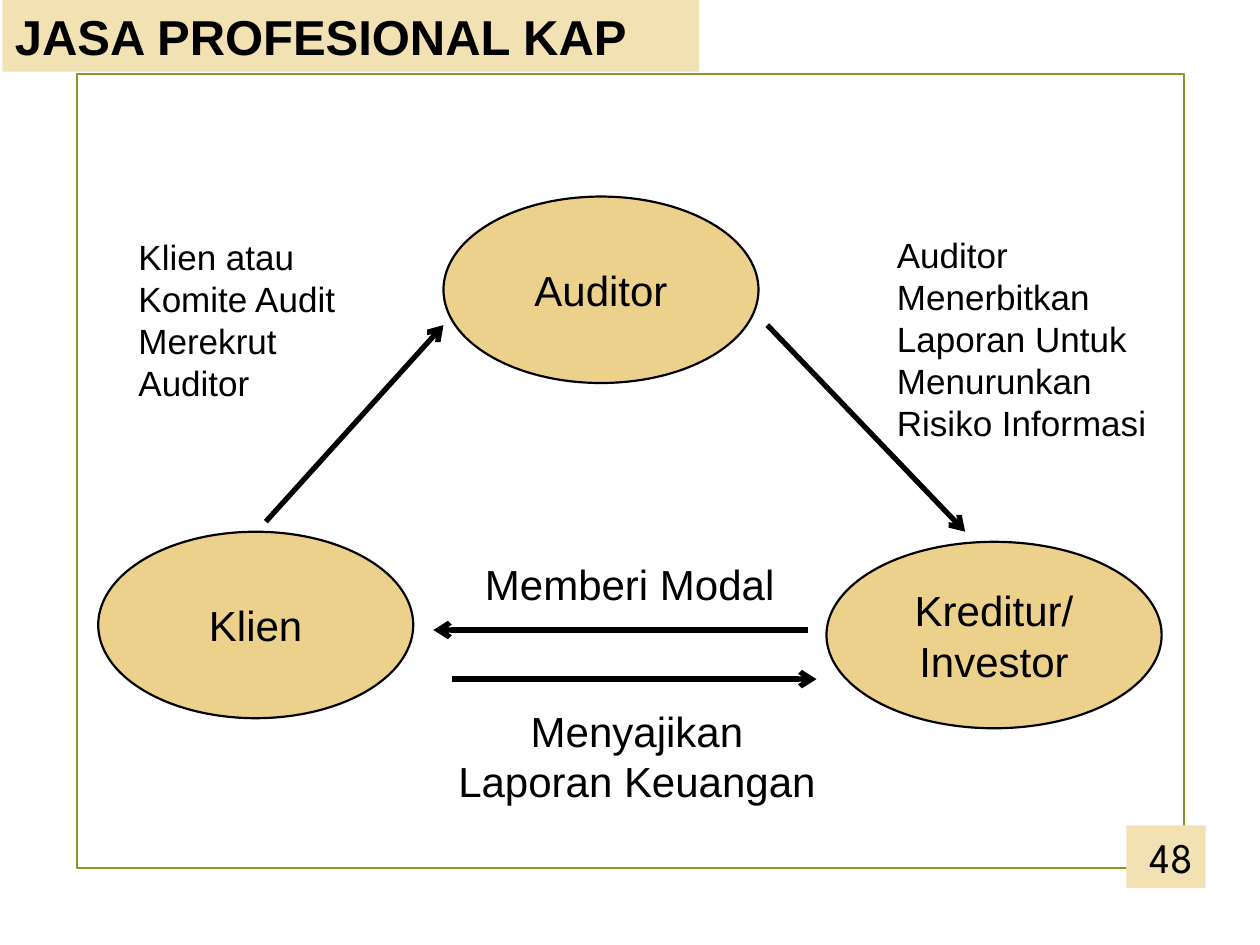
from lxml import etree
from pptx import Presentation
from pptx import util as u
from pptx.dml.color import RGBColor
from pptx.enum import shapes, text
from pptx.oxml.ns import qn

BLACK = RGBColor(0x00, 0x00, 0x00)
GREEN = RGBColor(0x83, 0x99, 0x2A)
SAND = RGBColor(0xF2, 0xE1, 0xB3)
GOLD = RGBColor(0xEB, 0xD1, 0x8C)

RECTANGLE = shapes.MSO_SHAPE.RECTANGLE
OVAL = shapes.MSO_SHAPE.OVAL
LEFT, CENTER, RIGHT = text.PP_ALIGN.LEFT, text.PP_ALIGN.CENTER, text.PP_ALIGN.RIGHT

# Boxes are left, top, width, height in inches.
FRAME = (0.61, 0.59, 8.79, 6.3)
TITLE = ("JASA PROFESIONAL KAP", (0.02, 0, 5.53, 0.57))
PAGE_NUMBER = ("48", (8.94, 6.55, 0.63, 0.5))
PARTIES = [
    ("Auditor", (3.52, 1.56, 2.5, 1.48)),
    ("Klien", (0.78, 4.22, 2.5, 1.48)),
    ("Kreditur/\nInvestor", (6.56, 4.3, 2.66, 1.48)),
]
LABELS = [
    ("Memberi Modal", (3.75, 4.38, 2.52, 0.5), 24, LEFT),
    ("Menyajikan\nLaporan Keuangan", (3.52, 5.55, 3.07, 0.91), 24, CENTER),
    ("Klien atau\nKomite Audit\nMerekrut\nAuditor", (1, 1.82, 1.78, 1.45), 20, LEFT),
    ("Auditor\nMenerbitkan\nLaporan Untuk\nMenurunkan\nRisiko Informasi",
     (7.02, 1.8, 2.2, 1.78), 20, LEFT),
]
ARROWS = [  # start x, start y, end x, end y
    (6.41, 5, 3.44, 5),
    (3.59, 5.39, 6.48, 5.39),
    (2.11, 4.14, 3.52, 2.58),
    (6.09, 2.58, 7.66, 4.22),
]


def inches(values):
    return [u.Inches(value) for value in values]


def write(shape, words, size, align=LEFT, anchor=text.MSO_ANCHOR.TOP,
          wrap=True, font="Arial", bold=False):
    frame = shape.text_frame
    frame.text = words
    frame.word_wrap = wrap
    frame.vertical_anchor = anchor
    for paragraph in frame.paragraphs:
        paragraph.alignment = align
        for run in paragraph.runs:
            run.font.name = font
            run.font.size = u.Pt(size)
            run.font.bold = bold
            run.font.color.rgb = BLACK


def add_figure(slide, kind, box, fill=None, line=None):
    shape = slide.shapes.add_shape(kind, *inches(box))
    shape.shadow.inherit = False
    if fill is None:
        shape.fill.background()
    else:
        shape.fill.solid()
        shape.fill.fore_color.rgb = fill
    if line is None:
        shape.line.fill.background()
    else:
        shape.line.color.rgb = line
        shape.line.width = u.Pt(1.25)
    return shape


def add_arrow(slide, ends):
    arrow = slide.shapes.add_connector(shapes.MSO_CONNECTOR.STRAIGHT, *inches(ends))
    arrow.line.color.rgb = BLACK
    arrow.line.width = u.Pt(3)
    etree.SubElement(arrow.line._get_or_add_ln(), qn("a:tailEnd"), type="arrow")
    etree.SubElement(arrow._element.spPr, qn("a:effectLst"))


def main():
    presentation = Presentation()
    presentation.slide_width, presentation.slide_height = inches((10, 7.5))
    slide = presentation.slides.add_slide(presentation.slide_layouts[6])

    add_figure(slide, RECTANGLE, FRAME, line=GREEN)

    words, box = TITLE
    write(add_figure(slide, RECTANGLE, box, SAND), words, 28, bold=True)

    for words, box in PARTIES:
        write(add_figure(slide, OVAL, box, GOLD, BLACK), words, 24, CENTER,
              text.MSO_ANCHOR.MIDDLE)

    for ends in ARROWS:
        add_arrow(slide, ends)

    for words, box, size, align in LABELS:
        write(slide.shapes.add_textbox(*inches(box)), words, size, align, wrap=False)

    words, box = PAGE_NUMBER
    write(add_figure(slide, RECTANGLE, box, SAND), words, 24, RIGHT,
          font="League Spartan")

    presentation.save("out.pptx")


if __name__ == "__main__":
    main()
